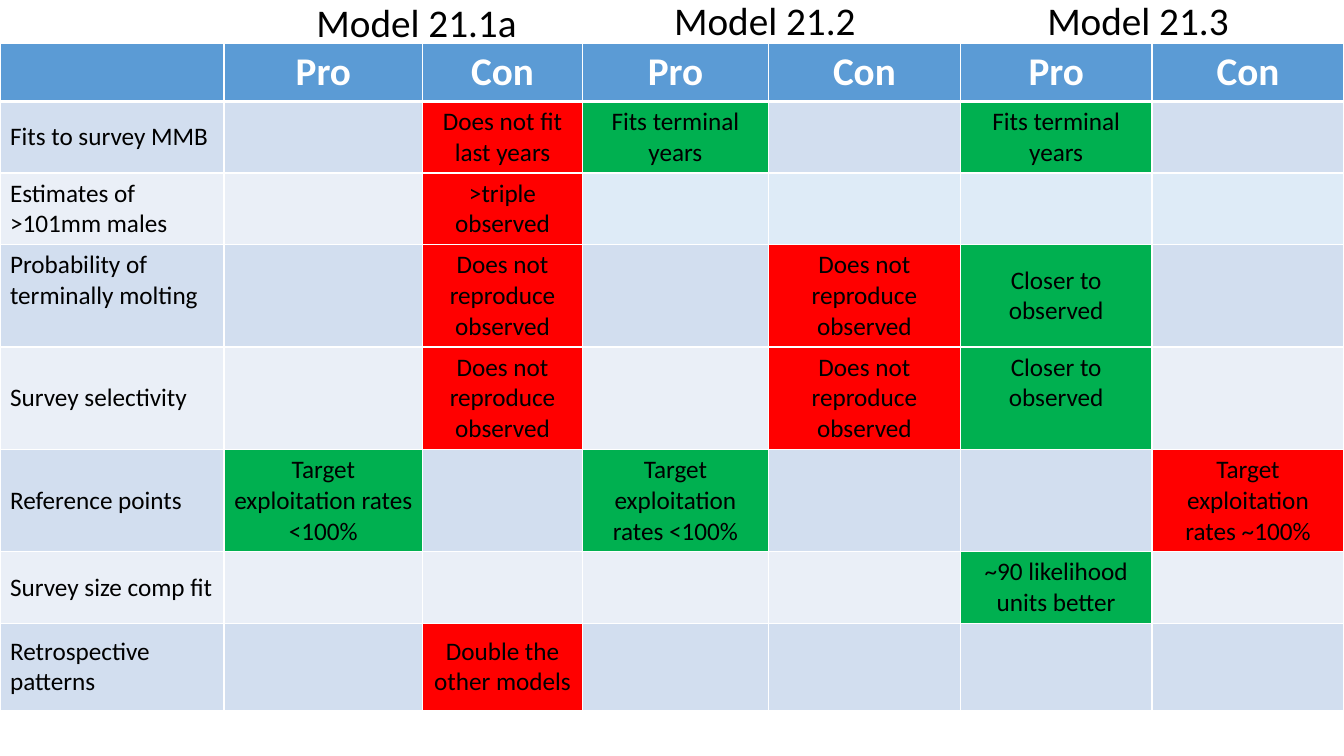
import pptx
import pptx.dml.color
import pptx.enum.text
import pptx.oxml
import pptx.oxml.ns
import pptx.util

Pt = pptx.util.Pt
ALIGN = pptx.enum.text.PP_ALIGN
ANCHOR = pptx.enum.text.MSO_ANCHOR

HEADER, WHITE, BLACK = "5B9BD5", "FFFFFF", "000000"
BANDS = ["EAEFF7", "D2DEEF"]
PALE = "DEEBF7"
PRO, CON = "00B050", "FF0000"

COLUMN_WIDTHS = [160, 142, 114, 133, 137, 137, 137]
ROW_HEIGHTS = [41, 51, 51, 73, 73, 73, 51, 62]

# Criterion, then the remarks keyed by column; odd columns are pros, even ones cons.
CRITERIA = [
    ("Fits to survey MMB",
     {2: "Does not fit last years", 3: "Fits terminal years", 5: "Fits terminal years"}),
    ("Estimates of >101mm males", {2: ">triple observed"}),
    ("Probability of terminally molting",
     {2: "Does not reproduce observed", 4: "Does not reproduce observed",
      5: "Closer to observed"}),
    ("Survey selectivity",
     {2: "Does not reproduce observed", 4: "Does not reproduce observed",
      5: "Closer to observed"}),
    ("Reference points",
     {1: "Target exploitation rates <100%", 3: "Target exploitation rates <100%",
      6: "Target exploitation rates ~100%"}),
    ("Survey size comp fit", {5: "~90 likelihood units better"}),
    ("Retrospective patterns", {2: "Double the other models"}),
]
TOP_ANCHORED = {(3, 0), (4, 5)}

MODELS = [("Model 21.1a", 219, -4.5), ("Model 21.2", 474.5, -6.5), ("Model 21.3", 741, -6.5)]


def rgb(color):
    return pptx.dml.color.RGBColor.from_string(color)


class Deck:
    font = "Calibri"

    def __init__(self, width, height):
        self.prs = pptx.Presentation()
        self.prs.slide_width, self.prs.slide_height = Pt(width), Pt(height)
        self.s = self.prs.slides.add_slide(self.prs.slide_layouts[6])

    def add_text(self, tf, text, size, color, bold=False, align=ALIGN.LEFT):
        p = tf.paragraphs[0]
        p.alignment = align
        r = p.add_run()
        r.text = text
        r.font.name, r.font.size, r.font.bold = self.font, Pt(size), bold
        r.font.color.rgb = rgb(color)

    def label(self, text, left, top, width=260.5, height=41):
        tf = self.s.shapes.add_textbox(Pt(left), Pt(top), Pt(width), Pt(height)).text_frame
        tf.word_wrap = True
        tf.auto_size = pptx.enum.text.MSO_AUTO_SIZE.SHAPE_TO_FIT_TEXT
        self.add_text(tf, text, 28, BLACK)

    def table(self, left, top, widths, heights):
        frame = self.s.shapes.add_table(len(heights), len(widths), Pt(left), Pt(top),
                                        Pt(sum(widths)), Pt(sum(heights)))
        table = frame.table
        table.horz_banding = False
        for column, width in zip(table.columns, widths):
            column.width = Pt(width)
        for row, height in zip(table.rows, heights):
            row.height = Pt(height)
        return table

    def cell(self, cell, fill, text="", bottom=1, anchor=ANCHOR.MIDDLE, **style):
        self.borders(cell, bottom)
        cell.fill.solid()
        cell.fill.fore_color.rgb = rgb(fill)
        cell.vertical_anchor = anchor
        if text:
            self.add_text(cell.text_frame, text, **style)

    def borders(self, cell, bottom):
        tc_pr = cell._tc.get_or_add_tcPr()
        for side, width in (("L", 1), ("R", 1), ("T", 1), ("B", bottom)):
            tc_pr.append(pptx.oxml.parse_xml(
                f'<a:ln{side} {pptx.oxml.ns.nsdecls("a")} w="{int(Pt(width))}"><a:solidFill>'
                f'<a:srgbClr val="{WHITE}"/></a:solidFill></a:ln{side}>'))


def main():
    deck = Deck(960, 540)
    table = deck.table(0, 31, COLUMN_WIDTHS, ROW_HEIGHTS)

    for col, text in enumerate([""] + ["Pro", "Con"] * len(MODELS)):
        deck.cell(table.cell(0, col), HEADER, text, bottom=3, anchor=ANCHOR.TOP,
                  size=28, color=WHITE, bold=True, align=ALIGN.CENTER)

    for row, (criterion, remarks) in enumerate(CRITERIA, 1):
        for col in range(len(COLUMN_WIDTHS)):
            fill = PALE if row == 2 and col > 2 else BANDS[row % 2]
            if col in remarks:
                fill = PRO if col % 2 else CON
            text = remarks.get(col, "") if col else criterion
            anchor = ANCHOR.TOP if (row, col) in TOP_ANCHORED else ANCHOR.MIDDLE
            deck.cell(table.cell(row, col), fill, text, anchor=anchor, size=18, color=BLACK,
                      align=ALIGN.CENTER if col else ALIGN.LEFT)

    for name, left, top in MODELS:
        deck.label(name, left, top)
    deck.prs.save("out.pptx")


if __name__ == "__main__":
    main()
